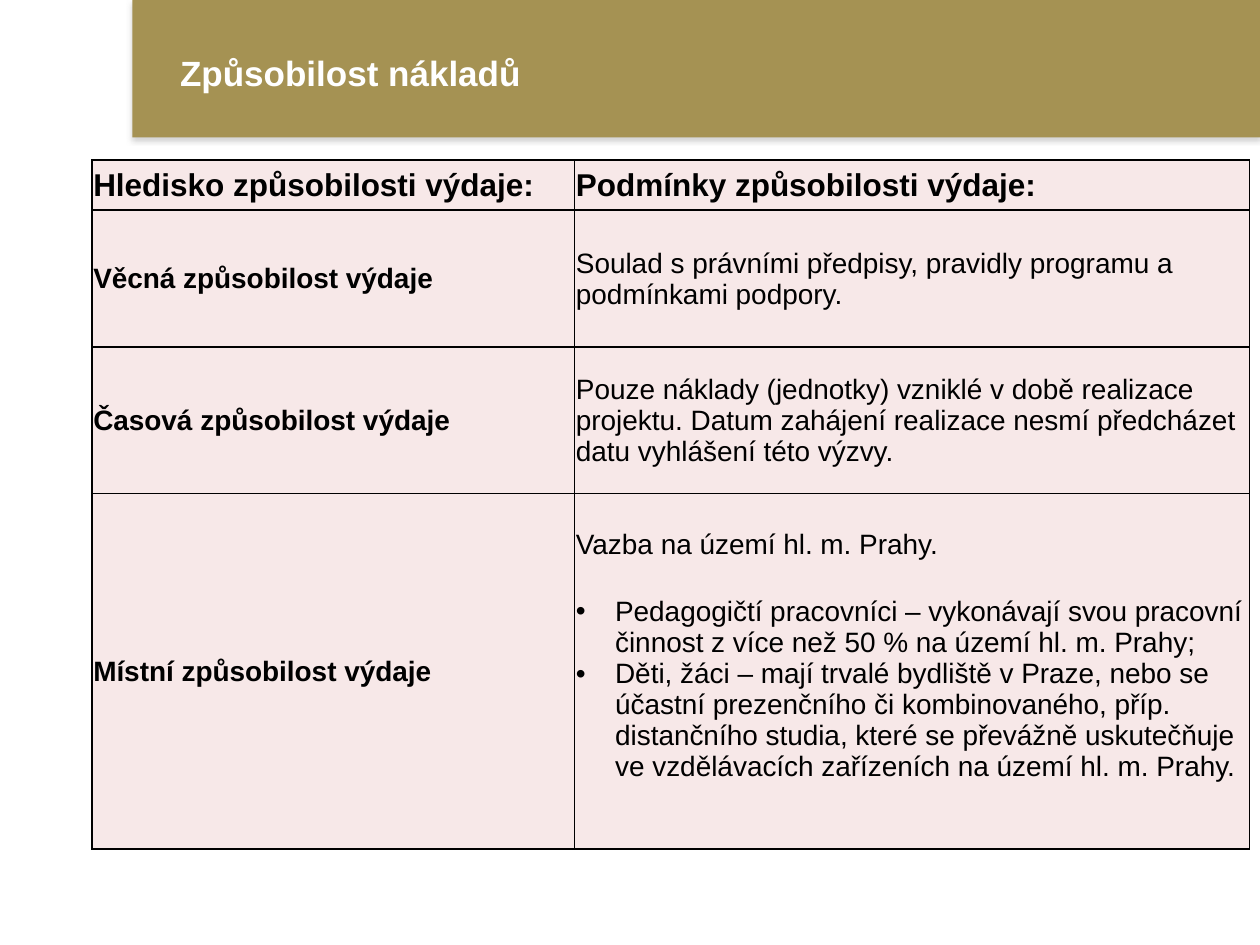
import pptx
import pptx.util
import pptx.dml.color
import pptx.enum.shapes
import pptx.enum.text
import pptx.oxml
import pptx.oxml.ns
from lxml import etree

Cm, Pt = pptx.util.Cm, pptx.util.Pt
RGBColor = pptx.dml.color.RGBColor
MIDDLE = pptx.enum.text.MSO_ANCHOR.MIDDLE

GOLD = RGBColor(0xA5, 0x92, 0x53)
PINK = RGBColor(0xF7, 0xE8, 0xE8)
WHITE = RGBColor(0xFF, 0xFF, 0xFF)
BLACK = RGBColor(0, 0, 0)
FONT = "Arial"

HEADING = "Způsobilost nákladů"
HEADERS = ("Hledisko způsobilosti výdaje:", "Podmínky způsobilosti výdaje:")
CRITERIA = [
    ("Věcná způsobilost výdaje",
     "Soulad s právními předpisy, pravidly programu a podmínkami podpory.", []),
    ("Časová způsobilost výdaje",
     "Pouze náklady (jednotky) vzniklé v době realizace projektu. Datum zahájení "
     "realizace nesmí předcházet datu vyhlášení této výzvy.", []),
    ("Místní způsobilost výdaje", "Vazba na území hl. m. Prahy.", [
        "Pedagogičtí pracovníci – vykonávají svou pracovní činnost z více než 50 % "
        "na území hl. m. Prahy;",
        "Děti, žáci – mají trvalé bydliště v Praze, nebo se účastní prezenčního či "
        "kombinovaného, příp. distančního studia, které se převážně uskutečňuje ve "
        "vzdělávacích zařízeních na území hl. m. Prahy.",
    ]),
]
COLUMN_WIDTHS = (9.73, 13.61)
ROW_HEIGHTS = (1.0, 2.77, 2.95, 7.16)
BULLET_INDENT = Cm(0.79)


def add_run(paragraph, text, size, color=BLACK, bold=False):
    run = paragraph.add_run()
    run.text = text
    run.font.name = FONT
    run.font.size = Pt(size)
    run.font.bold = bold
    run.font.color.rgb = color


def add_xml(parent, xml):
    namespace = pptx.oxml.ns.nsdecls("a")
    parent.append(etree.fromstring(xml.replace(" NS", " " + namespace, 1)))


def add_bullet(paragraph):
    properties = paragraph._p.get_or_add_pPr()
    properties.set("marL", str(BULLET_INDENT))
    properties.set("indent", str(-BULLET_INDENT))
    add_xml(properties, f'<a:buFont NS typeface="{FONT}"/>')
    add_xml(properties, '<a:buChar NS char="•"/>')


def style_cell(cell):
    cell.vertical_anchor = MIDDLE
    cell.margin_left = cell.margin_right = cell.margin_top = Cm(0.03)
    cell.margin_bottom = 0
    properties = cell._tc.get_or_add_tcPr()
    for side in ("lnL", "lnR", "lnT", "lnB"):
        add_xml(properties, f'<a:{side} NS w="{Pt(1)}"><a:solidFill>'
                            f'<a:srgbClr val="{BLACK}"/></a:solidFill></a:{side}>')
    cell.fill.solid()
    cell.fill.fore_color.rgb = PINK


def add_banner(slide):
    banner = slide.shapes.add_shape(
        pptx.enum.shapes.MSO_SHAPE.RECTANGLE, Cm(2.67), 0, Cm(22.73), Cm(2.77))
    banner.fill.solid()
    banner.fill.fore_color.rgb = GOLD
    banner.line.fill.background()
    add_xml(banner._element.spPr,
            f'<a:effectLst NS><a:outerShdw blurRad="{Pt(3.1)}" dist="{Pt(1.8)}" '
            'dir="5400000" rotWithShape="0"><a:srgbClr val="808080">'
            '<a:alpha val="35000"/></a:srgbClr></a:outerShdw></a:effectLst>')

    heading = slide.shapes.add_textbox(Cm(3.38), Cm(1.02), Cm(20.75), Cm(0.89))
    frame = heading.text_frame
    frame.word_wrap = True
    frame.vertical_anchor = MIDDLE
    add_run(frame.paragraphs[0], HEADING, 20, WHITE, True)


def add_criteria_table(slide):
    table = slide.shapes.add_table(
        len(ROW_HEIGHTS), len(COLUMN_WIDTHS), Cm(1.85), Cm(3.23),
        Cm(sum(COLUMN_WIDTHS)), Cm(sum(ROW_HEIGHTS))).table
    table.first_row = table.horz_banding = False
    for column, width in zip(table.columns, COLUMN_WIDTHS):
        column.width = Cm(width)
    for row, height in zip(table.rows, ROW_HEIGHTS):
        row.height = Cm(height)
    for cell in table.iter_cells():
        style_cell(cell)

    for column, header in enumerate(HEADERS):
        add_run(table.cell(0, column).text_frame.paragraphs[0], header, 18, bold=True)
    for row, (criterion, condition, bullets) in enumerate(CRITERIA, start=1):
        add_run(table.cell(row, 0).text_frame.paragraphs[0], criterion, 16, bold=True)
        condition_cell = table.cell(row, 1)
        frame = condition_cell.text_frame
        add_run(frame.paragraphs[0], condition, 16)
        if bullets:
            frame.paragraphs[0].space_after = Pt(20)
            condition_cell.margin_bottom = Cm(0.64)
        for bullet in bullets:
            paragraph = frame.add_paragraph()
            add_bullet(paragraph)
            add_run(paragraph, bullet, 16)


def main():
    presentation = pptx.Presentation()
    presentation.slide_width = Cm(25.4)
    presentation.slide_height = Cm(19.05)
    slide = presentation.slides.add_slide(presentation.slide_layouts[6])
    add_banner(slide)
    add_criteria_table(slide)
    presentation.save("out.pptx")


if __name__ == "__main__":
    main()
